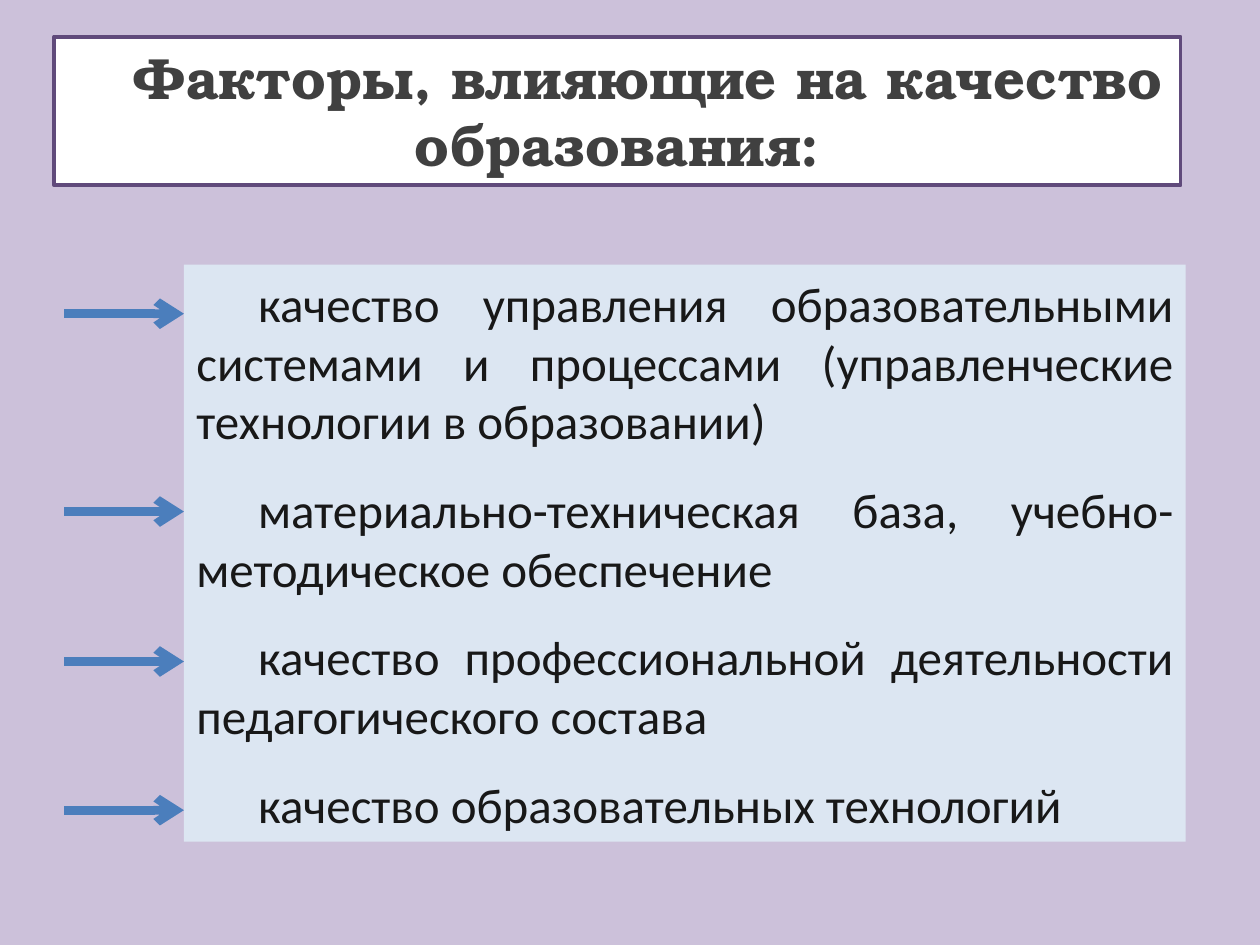
from lxml import etree
from pptx import Presentation
from pptx.dml.color import RGBColor
from pptx.enum.shapes import MSO_CONNECTOR, MSO_SHAPE
from pptx.enum.text import MSO_ANCHOR, PP_ALIGN
from pptx.oxml.ns import qn
from pptx.util import Inches, Pt

RECTANGLE = MSO_SHAPE.RECTANGLE
STRAIGHT = MSO_CONNECTOR.STRAIGHT
MIDDLE = MSO_ANCHOR.MIDDLE
CENTER = PP_ALIGN.CENTER
JUSTIFY = PP_ALIGN.JUSTIFY

COLORS = {
    "background": "CCC1DA",
    "title_fill": "FFFFFF",
    "title_border": "604A7B",
    "title_text": "404040",
    "panel": "DCE6F2",
    "body_text": "181818",
    "arrow": "4B7EBC",
}
TITLE = "Факторы, влияющие на качество образования:"
FACTORS = [
    ("качество управления образовательными системами и процессами "
     "(управленческие технологии в образовании)", 0.39),
    ("материально-техническая база, учебно-методическое обеспечение", 1.96),
    ("качество профессиональной деятельности педагогического состава", 3.15),
    ("качество образовательных технологий", 4.33),
]
FIRST_LINE_INDENT = 0.49
ARROW_LENGTH = 0.95


def color(name):
    return RGBColor.from_string(COLORS[name])


def add_panel(page, box, fill):
    panel = page.shapes.add_shape(RECTANGLE, *map(Inches, box))
    panel.shadow.inherit = False
    panel.fill.solid()
    panel.fill.fore_color.rgb = color(fill)
    panel.line.fill.background()
    panel.text_frame.word_wrap = True
    panel.text_frame.vertical_anchor = MIDDLE
    return panel


def write_para(para, text, align, font, size, text_color, bold=False):
    para.alignment = align
    properties = para._p.get_or_add_pPr()
    properties.set("marL", "0")
    properties.set("indent", str(Inches(FIRST_LINE_INDENT)))
    span = para.add_run()
    span.text = text
    span.font.name = font
    span.font.size = Pt(size)
    span.font.bold = bold
    span.font.color.rgb = color(text_color)


def add_title(page, box):
    panel = add_panel(page, box, "title_fill")
    panel.line.color.rgb = color("title_border")
    panel.line.width = Pt(2.25)
    write_para(panel.text_frame.paragraphs[0], TITLE, CENTER,
               "TeX Gyre Bonum", 32, "title_text", bold=True)


def add_arrow(page, left, top, length):
    arrow = page.shapes.add_connector(
        STRAIGHT, Inches(left), Inches(top), Inches(left + length), Inches(top))
    arrow.line.color.rgb = color("arrow")
    arrow.line.width = Pt(5)
    etree.SubElement(arrow.line._get_or_add_ln(), qn("a:tailEnd"), type="arrow")
    etree.SubElement(arrow._element.spPr, qn("a:effectLst"))


def add_factors(page, box):
    left, top, width, height = box
    frame = add_panel(page, box, "panel").text_frame
    for index, (text, arrow_offset) in enumerate(FACTORS):
        para = frame.add_paragraph() if index else frame.paragraphs[0]
        if index:
            para.space_before = Pt(17)
        write_para(para, text, JUSTIFY, "Calibri", 28, "body_text")
        add_arrow(page, left - ARROW_LENGTH, top + arrow_offset, ARROW_LENGTH)


def main():
    deck = Presentation()
    deck.slide_width = Inches(10)
    deck.slide_height = Inches(7.5)
    page = deck.slides.add_slide(deck.slide_layouts[6])
    page.background.fill.solid()
    page.background.fill.fore_color.rgb = color("background")
    add_title(page, (0.43, 0.29, 8.94, 1.18))
    add_factors(page, (1.46, 2.1, 7.95, 4.58))
    deck.save("out.pptx")


if __name__ == "__main__":
    main()
